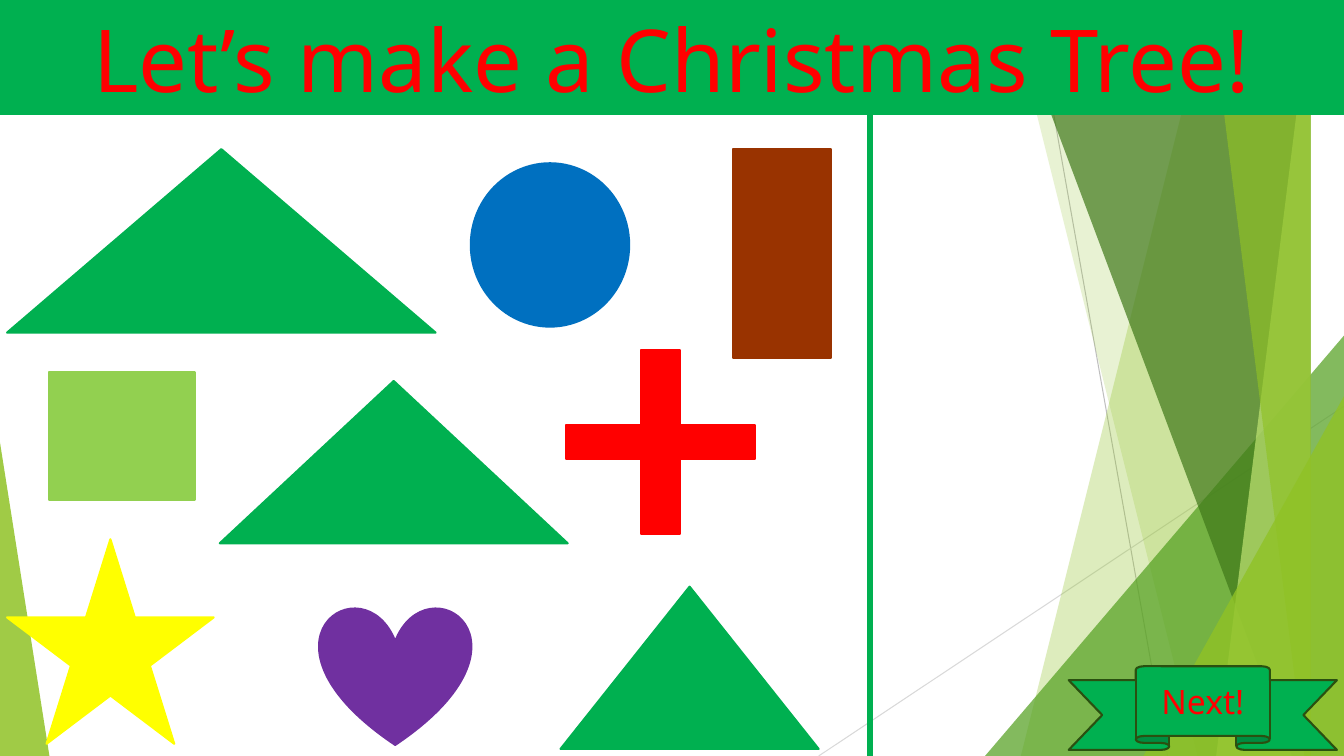
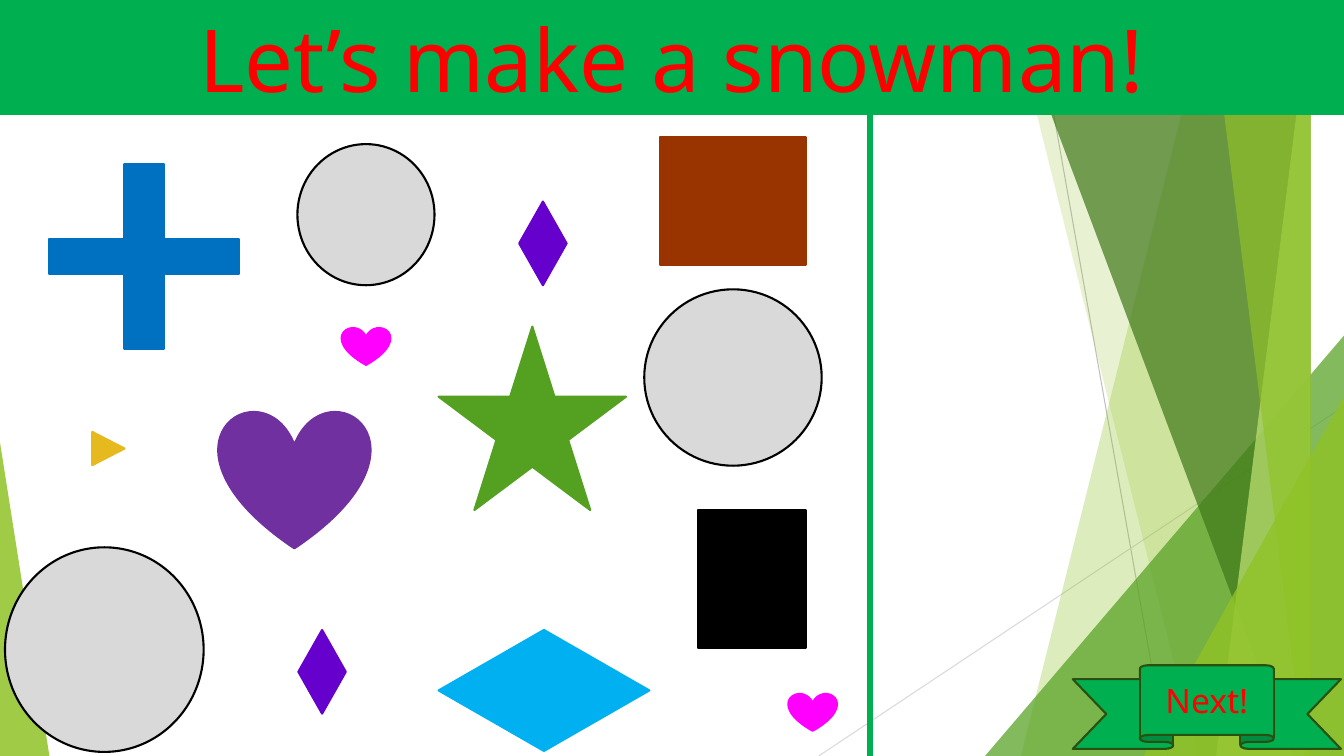
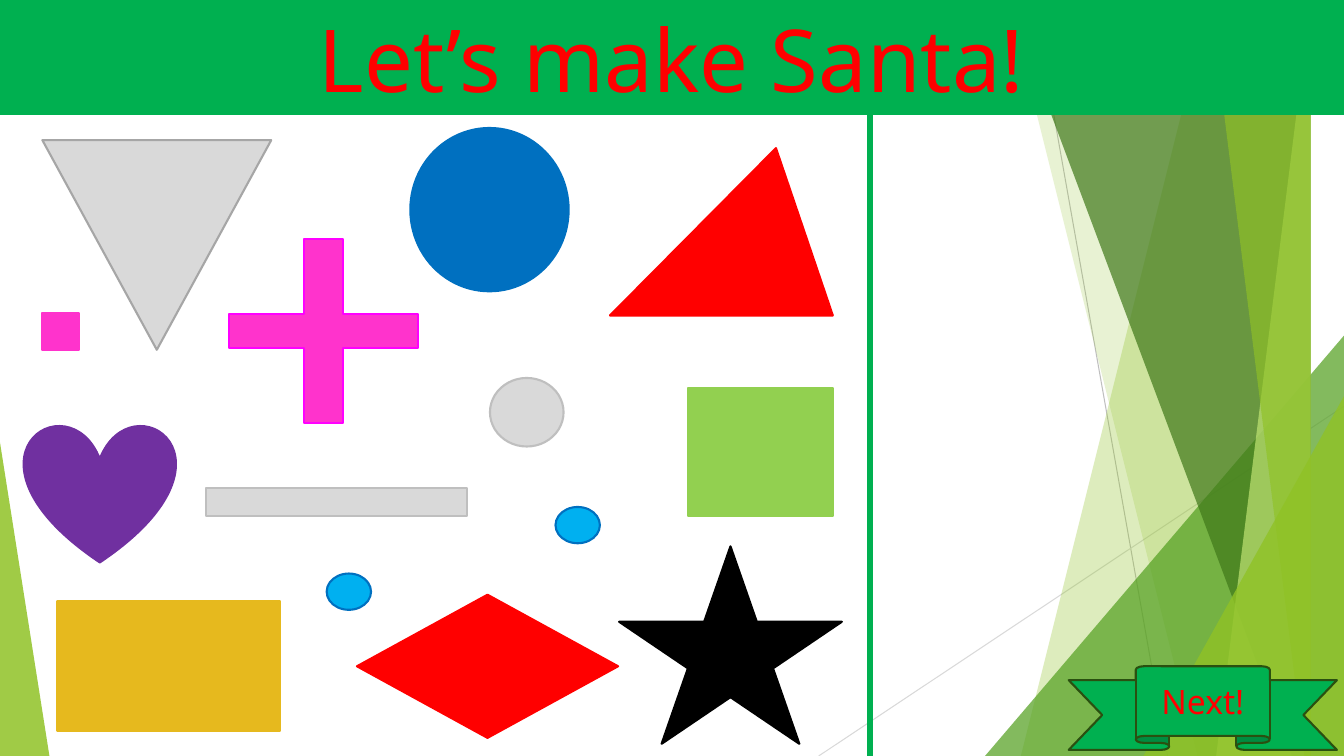
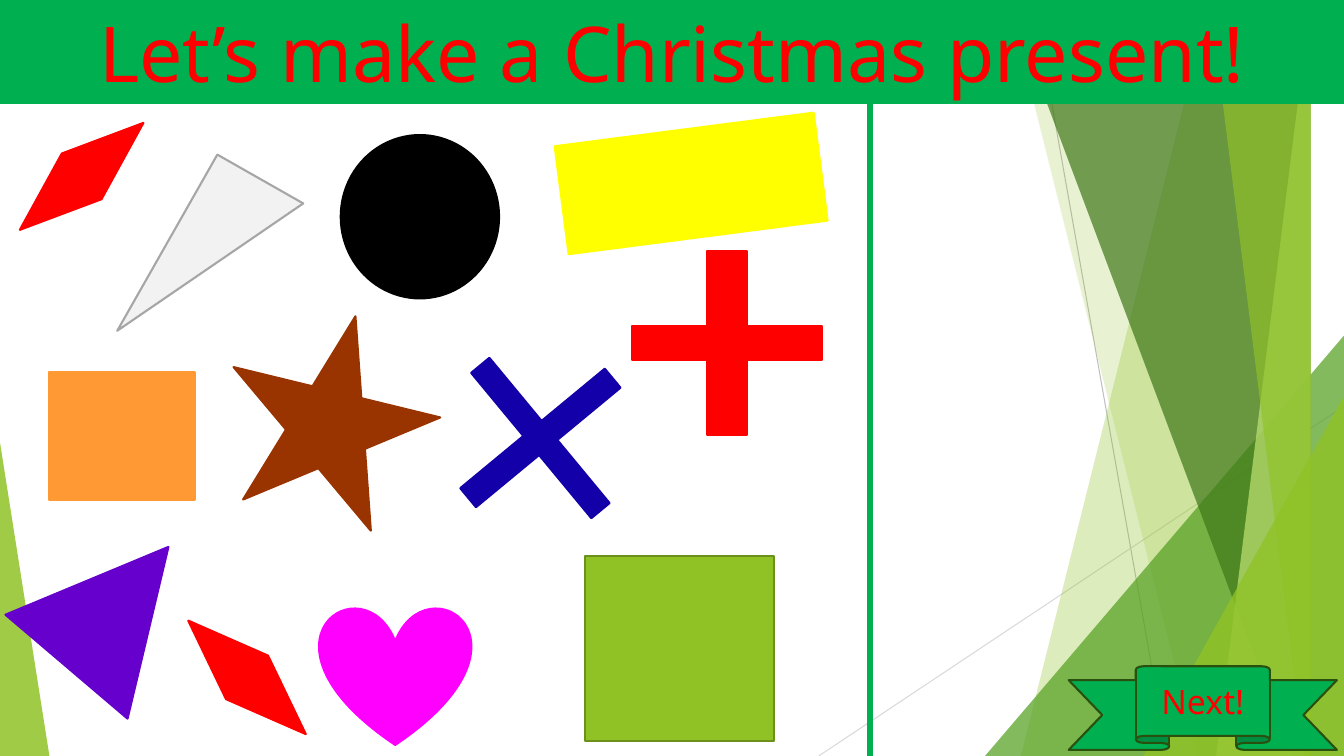
import dataclasses
import typing

import lxml.etree
import pptx
import pptx.dml.color
import pptx.enum.shapes
import pptx.enum.text
import pptx.oxml.ns
import pptx.util

Inches = pptx.util.Inches
Pt = pptx.util.Pt
Kind = pptx.enum.shapes.MSO_SHAPE
Anchor = pptx.enum.text.MSO_ANCHOR

WIDTH, HEIGHT = 13.33, 7.5
FONT = "Noto Sans"
DIVIDER_X = 8.63

GREEN, RED, BLUE, SKY = "00B050", "FF0000", "0070C0", "00B0F0"
PURPLE, VIOLET, NAVY = "7030A0", "6600CC", "1400A8"
MAGENTA, PINK = "FF00FF", "FF33CC"
BROWN, ORANGE, GOLD, YELLOW = "993300", "FF9933", "E6B91E", "FFFF00"
LIGHT_GREEN, LIME, LEAF, FOREST = "92D050", "90C226", "54A021", "3F7819"
PALE_LIME, DARK_LIME, RIBBON_EDGE = "C0E474", "6B901C", "2A5010"
BLACK, GREY, PALE_GREY = "000000", "D9D9D9", "F2F2F2"
MID_GREY, DARK_GREY = "BFBFBF", "A6A6A6"


@dataclasses.dataclass
class Piece:
    """One shape to choose from; the outline takes the fill colour unless given."""
    kind: typing.Any
    left: float
    top: float
    width: float
    height: float
    fill: str
    outline: typing.Optional[str] = None
    rotation: float = 0
    adjustment: typing.Optional[float] = None


def plus(left, top, fill, outline=None):
    return Piece(Kind.CROSS, left, top, 1.88, 1.83, fill, outline, adjustment=0.407)


def big_heart(left, top, fill):
    return Piece(Kind.HEART, left, top, 1.5, 1.37, fill)


def small_heart(left, top):
    return Piece(Kind.HEART, left, top, 0.48, 0.37, MAGENTA)


def block(left, top, fill):
    return Piece(Kind.RECTANGLE, left, top, 1.44, 1.27, fill)


def ball(left, top, fill):
    return Piece(Kind.OVAL, left, top, 1.57, 1.62, fill)


def eye(left, top):
    return Piece(Kind.OVAL, left, top, 0.44, 0.36, SKY, BLUE)


def small_rhombus(left, top):
    return Piece(Kind.FLOWCHART_DECISION, left, top, 0.47, 0.83, VIOLET)


def bow_half(left, top, rotation):
    return Piece(Kind.DIAMOND, left, top, 0.6, 1.62, RED, rotation=rotation)


TREE = [
    Piece(Kind.RECTANGLE, 7.27, 1.48, 0.97, 2.07, BROWN),
    ball(4.67, 1.62, BLUE),
    plus(5.61, 3.47, RED),
    big_heart(3.17, 6.02, PURPLE),
    Piece(Kind.ISOSCELES_TRIANGLE, 5.56, 5.82, 2.56, 1.61, GREEN),
    Piece(Kind.ISOSCELES_TRIANGLE, 2.18, 3.78, 3.45, 1.61, GREEN),
    Piece(Kind.ISOSCELES_TRIANGLE, 0.07, 1.48, 4.25, 1.82, GREEN),
    Piece(Kind.STAR_5_POINT, 0.07, 5.35, 2.05, 2.03, YELLOW),
    block(0.49, 3.69, LIGHT_GREEN),
]

SNOWMAN = [
    plus(0.49, 1.63, BLUE),
    big_heart(2.17, 4.07, PURPLE),
    Piece(Kind.OVAL, 0.05, 5.43, 1.97, 2.03, GREY, BLACK),
    Piece(Kind.OVAL, 6.39, 2.87, 1.76, 1.75, GREY, BLACK),
    Piece(Kind.OVAL, 2.95, 1.43, 1.36, 1.4, GREY, BLACK),
    small_heart(7.82, 6.88),
    Piece(Kind.ISOSCELES_TRIANGLE, 0.91, 4.29, 0.33, 0.32, GOLD, rotation=90),
    small_rhombus(5.15, 2),
    small_rhombus(2.96, 6.25),
    Piece(Kind.STAR_5_POINT, 4.35, 3.24, 1.86, 1.82, LEAF),
    Piece(Kind.FLOWCHART_DECISION, 4.35, 6.25, 2.09, 1.2, SKY),
    Piece(Kind.RECTANGLE, 6.92, 5.06, 1.07, 1.37, BLACK),
    block(6.55, 1.36, BROWN),
    small_heart(3.39, 3.25),
]

SANTA = [
    ball(4.07, 1.27, BLUE),
    plus(2.27, 2.37, PINK, MAGENTA),
    big_heart(0.24, 4.21, PURPLE),
    block(6.82, 3.85, LIGHT_GREEN),
    Piece(Kind.RECTANGLE, 0.57, 5.96, 2.21, 1.29, GOLD),
    Piece(Kind.ISOSCELES_TRIANGLE, 6.05, 1.47, 2.21, 1.66, RED, adjustment=0.745),
    Piece(Kind.RECTANGLE, 0.42, 3.11, 0.36, 0.36, PINK),
    Piece(Kind.FLOWCHART_DECISION, 3.54, 5.9, 2.59, 1.42, RED),
    Piece(Kind.STAR_5_POINT, 6.14, 5.42, 2.21, 1.96, BLACK),
    Piece(Kind.ISOSCELES_TRIANGLE, 0.42, 1.39, 2.27, 2.08, GREY, DARK_GREY, 180),
    Piece(Kind.OVAL, 4.86, 3.75, 0.73, 0.68, GREY, MID_GREY),
    eye(5.51, 5.03),
    Piece(Kind.RECTANGLE, 2.04, 4.84, 2.59, 0.28, GREY, MID_GREY),
    eye(3.24, 5.69),
]

PRESENT = [
    ball(3.38, 1.34, BLACK),
    big_heart(3.17, 6.02, MAGENTA),
    Piece(Kind.ISOSCELES_TRIANGLE, 0.37, 5.24, 1.59, 1.56, VIOLET, rotation=40.4),
    Piece(Kind.RECTANGLE, 5.56, 1.28, 2.59, 1.08, YELLOW, rotation=352.6),
    Piece(Kind.RIGHT_TRIANGLE, 1.08, 2.16, 2.01, 0.98, PALE_GREY, DARK_GREY, 119.6),
    Piece(Kind.STAR_5_POINT, 2.23, 3.11, 2.11, 2.03, BROWN, rotation=13.7),
    Piece(Kind.CROSS, 4.43, 3.41, 1.86, 1.87, NAVY, rotation=320.4, adjustment=0.437),
    Piece(Kind.RECTANGLE, 5.8, 5.52, 1.88, 1.83, LIME, DARK_LIME),
    block(0.49, 3.69, ORANGE),
    plus(6.27, 2.49, RED),
    bow_half(2.15, 5.91, 134),
    bow_half(0.51, 0.94, 49.1),
]


def rgb(value):
    return pptx.dml.color.RGBColor.from_string(value)


def paint(shape, fill, outline=None, opacity=100):
    shape.shadow.inherit = False
    shape.fill.solid()
    shape.fill.fore_color.rgb = rgb(fill)
    if opacity < 100:
        qn = pptx.oxml.ns.qn
        colour = shape.element.spPr.find(qn("a:solidFill"))[0]
        lxml.etree.SubElement(colour, qn("a:alpha"), val=str(opacity * 1000))
    if outline:
        shape.line.color.rgb = rgb(outline)
        shape.line.width = Pt(1.5)
    else:
        shape.line.fill.background()


def write(shape, text, size):
    frame = shape.text_frame
    frame.word_wrap = True
    frame.auto_size = pptx.enum.text.MSO_AUTO_SIZE.NONE
    frame.vertical_anchor = Anchor.MIDDLE
    paragraph = frame.paragraphs[0]
    paragraph.alignment = pptx.enum.text.PP_ALIGN.CENTER
    run = paragraph.add_run()
    run.text = text
    run.font.name = FONT
    run.font.size = Pt(size)
    run.font.color.rgb = rgb(RED)


def add_line(slide, start, end, colour, weight):
    line = slide.shapes.add_connector(
        pptx.enum.shapes.MSO_CONNECTOR.STRAIGHT, *map(Inches, start + end))
    line.line.color.rgb = rgb(colour)
    line.line.width = Pt(weight)
    lxml.etree.SubElement(line.element.spPr, pptx.oxml.ns.qn("a:effectLst"))
    return line


def add_beam(slide, top_x, bottom_x, colour, opacity):
    """Add a translucent band from a slanted left edge to the slide's right edge."""
    builder = slide.shapes.build_freeform(top_x, 0, scale=Inches(1))
    builder.add_line_segments([(WIDTH, 0), (WIDTH, HEIGHT), (bottom_x, HEIGHT)])
    beam = builder.convert_to_shape()
    paint(beam, colour, opacity=opacity)
    return beam


def add_corner(slide, left, width, height, peak, colour, opacity):
    """Add a translucent triangle standing on the slide's bottom edge."""
    corner = slide.shapes.add_shape(
        Kind.ISOSCELES_TRIANGLE, *map(Inches, (left, HEIGHT - height, width, height)))
    corner.adjustments[0] = peak
    paint(corner, colour, opacity=opacity)
    return corner


def move_backdrop_to_layout(slide):
    """Draw the green facets and hand them to the layout that all slides share."""
    facets = [
        add_line(slide, (10.25, 0), (11.58, HEIGHT), MID_GREY, 0.75),
        add_line(slide, (WIDTH, 4.03), (8.12, HEIGHT), GREY, 0.75),
        add_beam(slide, 12.28, 10.04, LIME, 30),
        add_beam(slide, 10.5, 11.83, LIME, 20),
        add_corner(slide, 9.77, 3.56, 4.17, 1, LEAF, 72),
        add_beam(slide, 10.21, 12.91, FOREST, 70),
        add_beam(slide, 13.03, 11.92, PALE_LIME, 70),
        add_beam(slide, 11.96, 13.18, LIME, 65),
        add_corner(slide, 11.34, 1.99, 3.57, 1, LIME, 80),
        add_corner(slide, 0, 0.49, 3.11, 0, LIME, 85),
    ]
    layout_tree = slide.slide_layout.shapes.element
    for placeholder in list(slide.slide_layout.placeholders):
        if placeholder.placeholder_format.type != pptx.enum.shapes.PP_PLACEHOLDER.TITLE:
            layout_tree.remove(placeholder.element)
    for facet in facets:
        layout_tree.append(facet.element)


def add_title_band(slide, text, height, size):
    title = slide.shapes.title
    title.left, title.top = Inches(0), Inches(0)
    title.width, title.height = Inches(WIDTH), Inches(height)
    paint(title, GREEN)
    write(title, text, size)


def add_piece(slide, piece):
    shape = slide.shapes.add_shape(
        piece.kind, *map(Inches, (piece.left, piece.top, piece.width, piece.height)))
    shape.rotation = piece.rotation
    if piece.adjustment is not None:
        shape.adjustments[0] = piece.adjustment
    paint(shape, piece.fill, piece.outline or piece.fill)
    return shape


def add_activity(presentation, title, pieces, band_height=1.14, title_size=62,
                 ribbon_at=(10.6, 6.61)):
    slide = presentation.slides.add_slide(presentation.slide_layouts[5])
    add_title_band(slide, title, band_height, title_size)
    add_line(slide, (DIVIDER_X, band_height), (DIVIDER_X, HEIGHT), GREEN, 4.5)
    for piece in pieces:
        add_piece(slide, piece)
    ribbon = add_piece(slide, Piece(Kind.UP_RIBBON, *ribbon_at, 2.66, 0.83,
                                    GREEN, RIBBON_EDGE))
    write(ribbon, "Next!", 24)
    return slide


def main():
    presentation = pptx.Presentation()
    presentation.slide_width = Inches(WIDTH)
    presentation.slide_height = Inches(HEIGHT)
    tree_slide = add_activity(presentation, "Let’s make a Christmas Tree!", TREE)
    move_backdrop_to_layout(tree_slide)
    add_activity(presentation, "Let’s make a snowman!", SNOWMAN, ribbon_at=(10.64, 6.6))
    add_activity(presentation, "Let’s make Santa!", SANTA)
    add_activity(presentation, "Let’s make a Christmas present!", PRESENT,
                 band_height=1.03, title_size=55)
    presentation.save("out.pptx")


if __name__ == "__main__":
    main()
